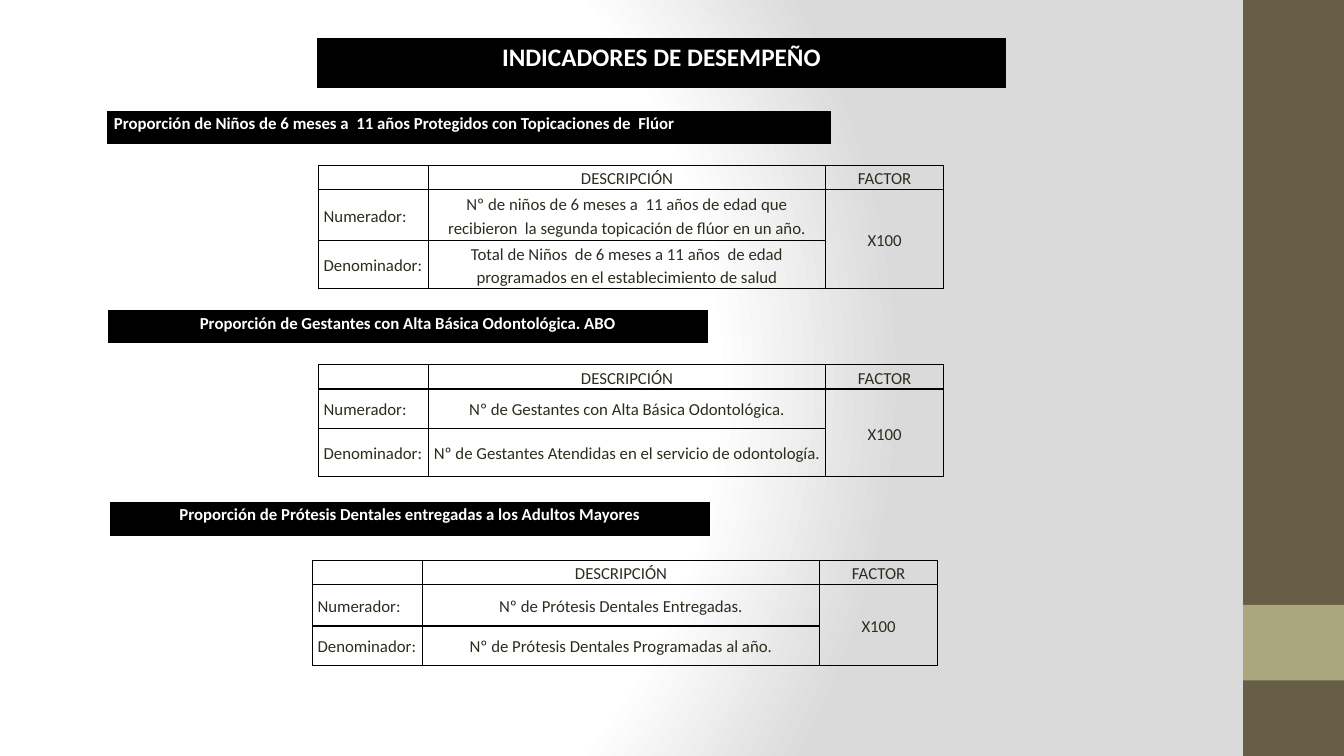
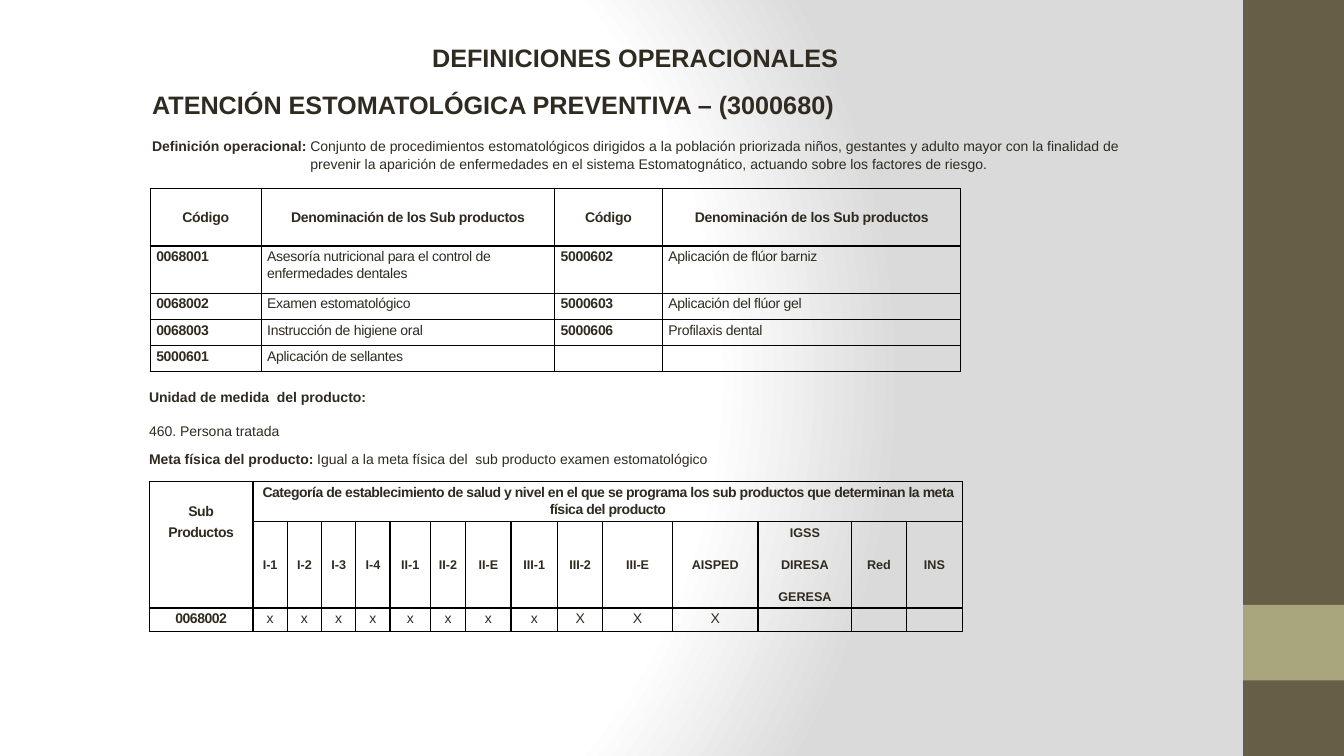
import pptx
import pptx.util
import pptx.dml.color
import pptx.enum.shapes
import pptx.enum.text
import pptx.oxml
import pptx.oxml.ns

Inches = pptx.util.Inches
Pt = pptx.util.Pt
RGBColor = pptx.dml.color.RGBColor
Align = pptx.enum.text.PP_ALIGN
Anchor = pptx.enum.text.MSO_ANCHOR

INK = RGBColor(0x2F, 0x2B, 0x20)
BLACK = RGBColor(0, 0, 0)
WHITE = RGBColor(0xFF, 0xFF, 0xFF)
GRAY = RGBColor(0xDA, 0xDA, 0xDA)
BROWN = RGBColor(0x67, 0x5E, 0x47)
OLIVE = RGBColor(0xA9, 0xA5, 0x7C)

BANDS = [(0, 7.5, BROWN), (6, 0.75, OLIVE)]  # top, height, colour

# left, top, width, height, size, alignment, text
BANNERS = [
    (3.14, 0.38, 6.84, 0.49, 18, Align.CENTER, "INDICADORES DE DESEMPEÑO"),
    (1.06, 1.1, 7.18, 0.33, 12, Align.LEFT,
     "Proporción de Niños de 6 meses a  11 años Protegidos con Topicaciones de  Flúor"),
    (1.07, 3.08, 5.95, 0.32, 12, Align.CENTER,
     "Proporción de Gestantes con Alta Básica Odontológica. ABO"),
    (1.09, 4.98, 5.95, 0.34, 12, Align.CENTER,
     "Proporción de Prótesis Dentales entregadas a los Adultos Mayores"),
]

# left, top, row heights, numerator, denominator
RATIOS = [
    (3.16, 1.64, [0.24, 0.51, 0.47],
     "Nº de niños de 6 meses a  11 años de edad que recibieron  la segunda topicación de flúor en un año.",
     "Total de Niños  de 6 meses a 11 años  de edad programados en el establecimiento de salud"),
    (3.16, 3.62, [0.24, 0.39, 0.48],
     "Nº de Gestantes con Alta Básica Odontológica.",
     "Nº de Gestantes Atendidas en el servicio de odontología."),
    (3.1, 5.56, [0.24, 0.41, 0.39],
     "Nº de Prótesis Dentales Entregadas.",
     "Nº de Prótesis Dentales Programadas al año."),
]
RATIO_COLS = [1.09, 3.94, 1.17]

HEADS = ["DEFINICIONES OPERACIONALES",
         "ATENCIÓN ESTOMATOLÓGICA PREVENTIVA – (3000680)"]
MEANING = ("Definición operacional:",
           " Conjunto de procedimientos estomatológicos dirigidos a la población priorizada "
           "niños, gestantes y adulto mayor con la finalidad de prevenir la aparición de "
           "enfermedades en el sistema Estomatognático, actuando sobre los factores de riesgo.")
UNIT = ["Unidad de medida  del producto:", "460. Persona tratada"]
GOAL = ("Meta física del producto:",
        " Igual a la meta física del  sub producto examen estomatológico")

CODE_COLS = [1.1, 2.91, 1.07, 2.96]
CODE_ROWS = [0.57, 0.47, 0.26, 0.26, 0.26]
CODES = [
    ["Código", "Denominación de los Sub productos"] * 2,
    ["0068001", "Asesoría nutricional para el control de enfermedades dentales",
     "5000602", "Aplicación de flúor barniz"],
    ["0068002", "Examen estomatológico", "5000603", "Aplicación del flúor gel"],
    ["0068003", "Instrucción de higiene oral", "5000606", "Profilaxis dental"],
    ["5000601", "Aplicación de sellantes", "", ""],
]

LEVEL_COLS = [1.03, 0.34, 0.34, 0.34, 0.34, 0.4, 0.35, 0.45, 0.46, 0.45,
              0.69, 0.85, 0.93, 0.54, 0.56]
LEVEL_ROWS = [0.39, 0.85, 0.23]
LEVELS = [
    ["Sub", "Categoría de establecimiento de salud y nivel en el que se programa los "
     "sub productos que determinan la meta física del producto"] + [""] * 13,
    ["Productos", "I-1", "I-2", "I-3", "I-4", "II-1", "II-2", "II-E", "III-1", "III-2",
     "III-E", "AISPED", "IGSS\nDIRESA\nGERESA", "Red", "INS"],
    ["0068002"] + ["x"] * 8 + ["X"] * 3 + [""] * 3,
]


def paint(run, size, font, color=INK, bold=False, space=0):
    run.font.size = Pt(size)
    run.font.name = font
    run.font.bold = bold
    run.font.color.rgb = color
    if space:
        run._r.get_or_add_rPr().set("spc", str(round(space * 100)))


def edge(cell, sides):
    """Draw black lines on the named sides (of L, R, T, B) and none on the rest."""
    space = pptx.oxml.ns.nsdecls("a")
    for spot, side in enumerate("LRTB"):
        fill = (f'<a:solidFill><a:srgbClr val="{BLACK}"/></a:solidFill>'
                if side in sides else "<a:noFill/>")
        line = pptx.oxml.parse_xml(f'<a:ln{side} {space} w="12700">{fill}</a:ln{side}>')
        cell._tc.get_or_add_tcPr().insert(spot, line)


def write(cell, text, size, font, color=INK, bold=False, space=0, align=Align.CENTER,
          anchor=Anchor.MIDDLE, pad=(0.05, 0), lead=1.15, fill=None, sides="LRTB"):
    cell.text_frame.text = text
    cell.vertical_anchor = anchor
    cell.margin_left = cell.margin_right = Inches(pad[0])
    cell.margin_top = cell.margin_bottom = Inches(pad[1])
    if fill is None:
        cell.fill.background()
    else:
        cell.fill.solid()
        cell.fill.fore_color.rgb = fill
    edge(cell, sides)
    for spot, para in enumerate(cell.text_frame.paragraphs):
        para.alignment = align
        para.line_spacing = lead
        if spot:
            para.space_before = Pt(12)
        for run in para.runs:
            paint(run, size, font, color, bold, space)
        if not para.runs:
            para._p.get_or_add_endParaRPr().set("sz", str(size * 100))


def grid(slide, left, top, cols, rows, cells, look, spans=()):
    """Add a table; look(row, col) gives the options for write, spans hold corner cells."""
    frame = slide.shapes.add_table(len(rows), len(cols), Inches(left), Inches(top),
                                   Inches(sum(cols)), Inches(sum(rows)))
    table = frame.table
    table.first_row = table.horz_banding = False
    for col, width in zip(table.columns, cols):
        col.width = Inches(width)
    for row, height in zip(table.rows, rows):
        row.height = Inches(height)
    for r, line in enumerate(cells):
        for c, text in enumerate(line):
            write(table.cell(r, c), text, **look(r, c))
    for first, last in spans:
        table.cell(*first).merge(table.cell(*last))


def ratio_look(r, c):
    return dict(size=12, font="Calibri",
                align=Align.LEFT if c == 0 else Align.CENTER)


def code_look(r, c):
    look = dict(size=10, font="Arial", space=-0.2, pad=(0.06, 0.02), lead=1.07,
                bold=r == 0 or c % 2 == 0)
    if r:
        look.update(align=Align.LEFT, anchor=Anchor.TOP)
    return look


def level_look(r, c):
    look = dict(size=10, font="Arial", space=-0.3, pad=(0.02, 0.02), lead=1.07,
                bold=r < 2 or c == 0, anchor=Anchor.TOP)
    if r == 1 and c:
        look.update(size=9, space=0, anchor=Anchor.MIDDLE)
    if c == 0 and r == 0:
        look.update(anchor=Anchor.BOTTOM, sides="LRT")
    if c == 0 and r == 1:
        look.update(sides="LRB")
    return look


def box(slide, left, top, width, height, wrap=True):
    shape = slide.shapes.add_textbox(Inches(left), Inches(top), Inches(width), Inches(height))
    shape.text_frame.word_wrap = wrap
    return shape.text_frame


def pair(para, words):
    """Write a bold label and the plain text that follows it."""
    for spot, text in enumerate(words):
        run = para.add_run()
        run.text = text
        paint(run, 10, "Arial", bold=spot == 0)


def indent(para, left, first=0):
    props = para._p.get_or_add_pPr()
    props.set("marL", str(Inches(left)))
    props.set("indent", str(Inches(first)))


def backdrop(master):
    """Give every slide a round gradient from white to gray."""
    fill = master.background.fill
    fill.gradient()
    stops = "".join(f'<a:gs pos="{pos * 1000}"><a:srgbClr val="{color}"/></a:gs>'
                    for pos, color in [(0, WHITE), (75, WHITE), (100, GRAY)])
    new = pptx.oxml.parse_xml(
        f'<a:gradFill {pptx.oxml.ns.nsdecls("a")} rotWithShape="1"><a:gsLst>{stops}</a:gsLst>'
        '<a:path path="circle"><a:fillToRect l="20000" t="50000" r="100000" b="50000"/>'
        '</a:path></a:gradFill>')
    old = master._element.find(".//" + pptx.oxml.ns.qn("p:bgPr"))[0]
    old.getparent().replace(old, new)


def start(deck):
    """Add a blank slide with the side bands."""
    slide = deck.slides.add_slide(deck.slide_layouts[6])
    for top, height, color in BANDS:
        band = slide.shapes.add_shape(pptx.enum.shapes.MSO_SHAPE.RECTANGLE,
                                      Inches(12.33), Inches(top), Inches(1), Inches(height))
        band.shadow.inherit = False
        band.fill.solid()
        band.fill.fore_color.rgb = color
        band.line.fill.background()
    return slide


def rates(deck):
    slide = start(deck)
    for left, top, width, height, size, align, text in BANNERS:
        look = dict(size=size, font="Calibri", color=WHITE, bold=True, align=align,
                    anchor=Anchor.TOP, pad=(0.07, 0), fill=BLACK, sides="")
        grid(slide, left, top, [width], [height], [[text]], lambda r, c: look)
    for left, top, rows, upper, lower in RATIOS:
        cells = [["", "DESCRIPCIÓN", "FACTOR"],
                 ["Numerador:", upper, "X100"],
                 ["Denominador:", lower, ""]]
        grid(slide, left, top, RATIO_COLS, rows, cells, ratio_look, [((1, 2), (2, 2))])


def terms(deck):
    slide = start(deck)
    frame = box(slide, 0.91, 0.37, 10.28, 1.4)
    frame.text = "\n".join(HEADS)
    for para in frame.paragraphs:
        indent(para, 0.5)
        paint(para.runs[0], 18, "Arial", bold=True)
    frame.paragraphs[0].alignment = Align.CENTER
    para = frame.add_paragraph()
    pair(para, MEANING)
    indent(para, 2.07, -1.57)
    para.alignment = Align.JUSTIFY
    para.line_spacing = 1.07
    for para in frame.paragraphs:
        para.space_before = para.space_after = Pt(6)

    grid(slide, 1.49, 1.87, CODE_COLS, CODE_ROWS, CODES, code_look)

    frame = box(slide, 1.38, 3.79, 6.67, 0.63)
    frame.text = "\n".join(UNIT)
    for spot, para in enumerate(frame.paragraphs):
        para.line_spacing = 1.07
        para.space_before = para.space_after = Pt(6)
        paint(para.runs[0], 10, "Arial", bold=spot == 0)
    pair(box(slide, 1.38, 4.42, 5.78, 0.27, wrap=False).paragraphs[0], GOAL)

    grid(slide, 1.48, 4.78, LEVEL_COLS, LEVEL_ROWS, LEVELS, level_look, [((0, 1), (0, 14))])


def main():
    deck = pptx.Presentation()
    deck.slide_width, deck.slide_height = Inches(13.33), Inches(7.5)
    backdrop(deck.slide_master)
    rates(deck)
    terms(deck)
    deck.save("out.pptx")


if __name__ == "__main__":
    main()
